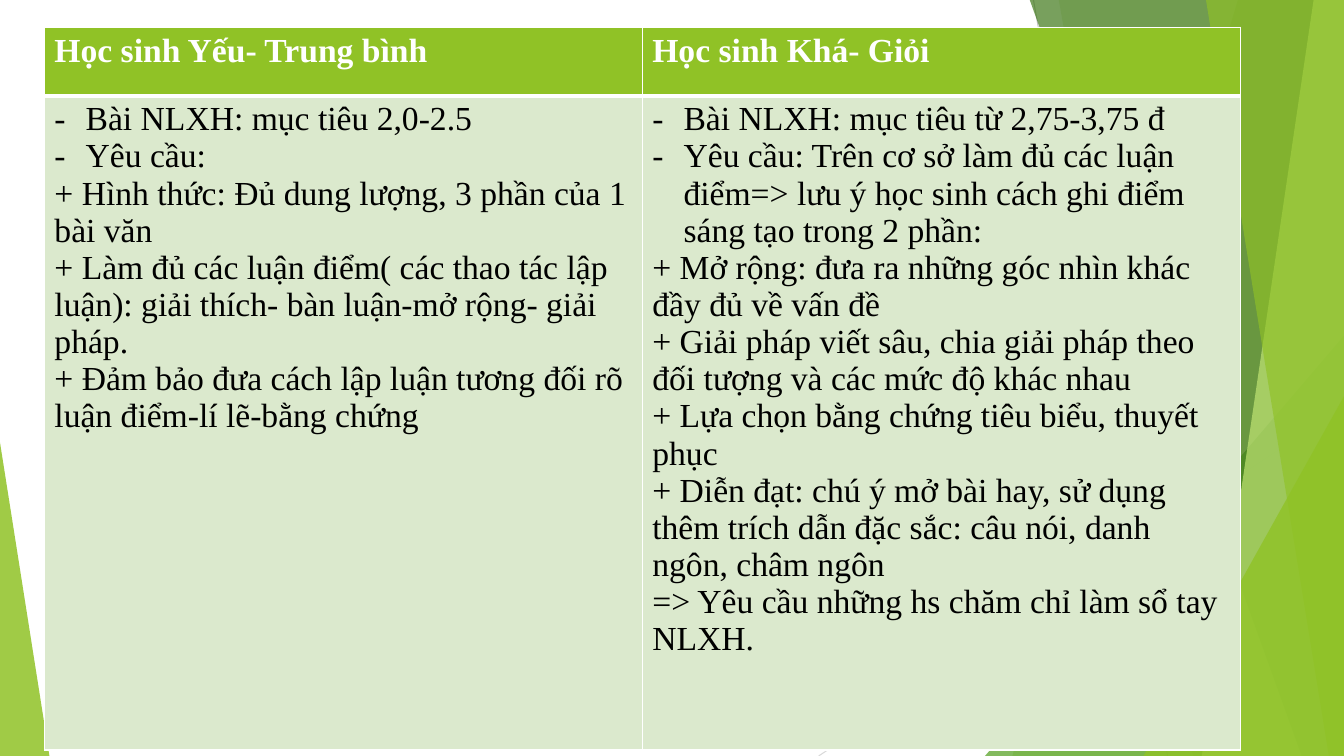
import pptx
import pptx.util
import pptx.dml.color
import pptx.enum.shapes
import pptx.oxml
import pptx.oxml.ns
import lxml.etree

Inches, Pt = pptx.util.Inches, pptx.util.Pt
RGBColor = pptx.dml.color.RGBColor
qn = pptx.oxml.ns.qn
MSO_SHAPE = pptx.enum.shapes.MSO_SHAPE

WHITE = RGBColor(0xFF, 0xFF, 0xFF)
BLACK = RGBColor(0, 0, 0)
LIME = RGBColor(0x90, 0xC2, 0x26)
GREEN = RGBColor(0x54, 0xA0, 0x21)
FOREST = RGBColor(0x3F, 0x78, 0x19)
PALE_LIME = RGBColor(0xC0, 0xE4, 0x74)
MINT = RGBColor(0xDB, 0xE9, 0xCD)
GREY = RGBColor(0xBF, 0xBF, 0xBF)
LIGHT_GREY = RGBColor(0xD9, 0xD9, 0xD9)
FONT = "Times New Roman"
W, H = 13.33, 7.5

prs = pptx.Presentation()
prs.slide_width, prs.slide_height = Inches(W), Inches(H)
s = prs.slides.add_slide(prs.slide_layouts[6])


def paint(sp, color, opacity):
    """Fill a facet with a translucent colour and no outline."""
    sp.shadow.inherit = False
    sp.fill.solid()
    sp.fill.fore_color.rgb = color
    sp.line.fill.background()
    clr = sp._element.spPr.find(qn("a:solidFill")).find(qn("a:srgbClr"))
    lxml.etree.SubElement(clr, qn("a:alpha")).set("val", str(opacity * 1000))


# Thin background lines
for x1, y1, x2, y2, color in [(10.25, 0, 11.58, H, GREY),
                              (W, 4.03, 8.12, H, LIGHT_GREY)]:
    line = s.shapes.add_connector(pptx.enum.shapes.MSO_CONNECTOR.STRAIGHT,
                                  Inches(x1), Inches(y1), Inches(x2), Inches(y2))
    line.line.color.rgb = color
    line.line.width = Pt(0.75)
    lxml.etree.SubElement(line._element.spPr, qn("a:effectLst"))

# Facets, back to front: bands run from a top x to a bottom x and reach the
# right edge; triangles stand on the bottom edge with the apex at one side
facets = [
    ("band", 12.28, 10.04, LIME, 30),
    ("band", 10.5, 11.83, LIME, 20),
    ("triangle", (9.77, 3.33, 3.56), 1, GREEN, 72),
    ("band", 10.21, 12.91, FOREST, 70),
    ("band", 13.03, 11.92, PALE_LIME, 70),
    ("band", 11.96, 13.18, LIME, 65),
    ("triangle", (11.34, 3.93, 1.99), 1, LIME, 80),
    ("triangle", (0, 4.39, 0.49), 0, LIME, 85),
]
for kind, a, b, color, opacity in facets:
    if kind == "band":
        fb = s.shapes.build_freeform(Inches(a), Inches(-0.01))
        fb.add_line_segments([(Inches(x), Inches(y)) for x, y in
                              [(W, -0.01), (W, H), (b, H)]], close=True)
        sp = fb.convert_to_shape()
    else:
        left, top, width = a
        sp = s.shapes.add_shape(MSO_SHAPE.ISOSCELES_TRIANGLE, Inches(left),
                                Inches(top), Inches(width), Inches(H - top))
        sp.adjustments[0] = b
    paint(sp, color, opacity)

# Comparison table: one list of paragraphs per cell, "- " marks a bullet
rows = [
    [["Học sinh Yếu- Trung bình"], ["Học sinh Khá- Giỏi"]],
    [["- Bài NLXH: mục tiêu 2,0-2.5",
      "- Yêu cầu:",
      "+ Hình thức: Đủ dung lượng, 3 phần của 1 bài văn",
      "+ Làm đủ các luận điểm( các thao tác lập luận): giải thích- bàn luận-mở rộng- giải pháp.",
      "+ Đảm bảo đưa cách lập luận tương đối rõ luận điểm-lí lẽ-bằng chứng"],
     ["- Bài NLXH: mục tiêu từ 2,75-3,75 đ",
      "- Yêu cầu: Trên cơ sở làm đủ các luận điểm=> lưu ý học sinh cách ghi điểm sáng tạo trong 2 phần:",
      "+ Mở rộng: đưa ra những góc nhìn khác đầy đủ về vấn đề",
      "+ Giải pháp viết sâu, chia giải pháp theo đối tượng và các mức độ khác nhau",
      "+ Lựa chọn bằng chứng tiêu biểu, thuyết phục",
      "+ Diễn đạt: chú ý mở bài hay, sử dụng thêm trích dẫn đặc sắc: câu nói, danh ngôn, châm ngôn",
      "=> Yêu cầu những hs chăm chỉ làm sổ tay NLXH."]],
]
table = s.shapes.add_table(2, 2, Inches(0.44), Inches(0.27),
                           Inches(11.86), Inches(7.17)).table
for row, height in zip(table.rows, (0.68, 6.49)):
    row.height = Inches(height)

for i, row in enumerate(rows):
    header = i == 0
    for j, paragraphs in enumerate(row):
        cell = table.cell(i, j)
        cell.fill.solid()
        cell.fill.fore_color.rgb = LIME if header else MINT
        tf = cell.text_frame
        tf.text = "\n".join(t.removeprefix("- ") for t in paragraphs)
        for p, text in zip(tf.paragraphs, paragraphs):
            font = p.runs[0].font
            font.name, font.size, font.bold = FONT, Pt(24), header
            font.color.rgb = WHITE if header else BLACK
            if text.startswith("- "):
                pPr = p._p.get_or_add_pPr()
                pPr.set("marL", str(Inches(0.31)))
                pPr.set("indent", str(-Inches(0.31)))
                lxml.etree.SubElement(pPr, qn("a:buFont")).set("typeface", FONT)
                lxml.etree.SubElement(pPr, qn("a:buChar")).set("char", "-")
        # White borders, thicker between the header and the body
        thick = "lnB" if header else "lnT"
        tcPr = cell._tc.get_or_add_tcPr()
        for k, side in enumerate(("lnL", "lnR", "lnT", "lnB")):
            ln = lxml.etree.Element(qn("a:" + side))
            ln.set("w", str(Pt(3 if side == thick else 1)))
            fill = lxml.etree.SubElement(ln, qn("a:solidFill"))
            lxml.etree.SubElement(fill, qn("a:srgbClr")).set("val", str(WHITE))
            tcPr.insert(k, ln)

prs.save("out.pptx")
